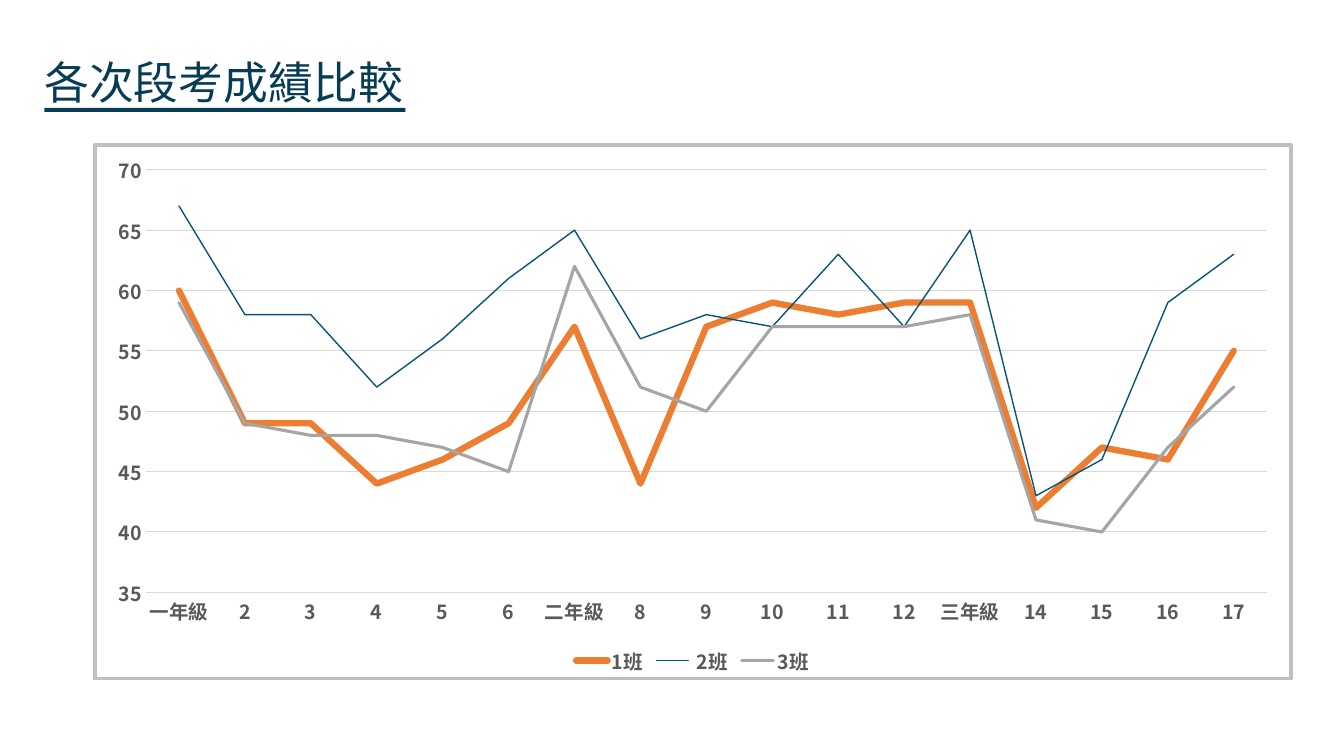
from lxml import etree
from pptx import Presentation
from pptx.chart.data import CategoryChartData
from pptx.dml.color import RGBColor
from pptx.enum.chart import XL_CHART_TYPE, XL_LEGEND_POSITION, XL_TICK_MARK
from pptx.enum.shapes import MSO_SHAPE
from pptx.enum.text import MSO_ANCHOR, MSO_AUTO_SIZE
from pptx.oxml import parse_xml
from pptx.oxml.ns import nsdecls, qn
from pptx.util import Inches, Pt

LINE_CHART = XL_CHART_TYPE.LINE
BOTTOM = XL_LEGEND_POSITION.BOTTOM
NO_TICK = XL_TICK_MARK.NONE
RECTANGLE = MSO_SHAPE.RECTANGLE
TOP = MSO_ANCHOR.TOP
GROW = MSO_AUTO_SIZE.SHAPE_TO_FIT_TEXT

EXAMS = ["一年級", "2", "3", "4", "5", "6", "二年級", "8", "9", "10", "11", "12",
         "三年級", "14", "15", "16", "17"]
CLASSES = [
    ("1班", "ED7D31", 4.5,
     [60, 49, 49, 44, 46, 49, 57, 44, 57, 59, 58, 59, 59, 42, 47, 46, 55]),
    (" 2班", "075576", 1,
     [67, 58, 58, 52, 56, 61, 65, 56, 58, 57, 63, 57, 65, 43, 46, 59, 63]),
    ("3班", "A5A5A5", 2.25,
     [59, 49, 48, 48, 47, 45, 62, 52, 50, 57, 57, 57, 58, 41, 40, 47, 52]),
]


def color(value):
    return RGBColor.from_string(value)


class ScoreSlide:
    title_font = "Noto Sans CJK TC"
    chart_font = "Noto Sans CJK SC"
    navy = "063D54"
    label_gray = "595959"
    grid_gray = "D9D9D9"
    border_gray = "BFBFBF"

    def __init__(self, presentation):
        self.slide = presentation.slides.add_slide(presentation.slide_layouts[6])

    def set_east_asian(self, properties, name):
        etree.SubElement(properties, qn("a:ea")).set("typeface", name)

    def style_labels(self, owner):
        owner.font.size = Pt(14)
        owner.font.bold = True
        owner.font.name = self.chart_font
        owner.font.color.rgb = color(self.label_gray)
        for properties in owner.font._element.iter(qn("a:defRPr")):
            self.set_east_asian(properties, self.chart_font)

    def style_line(self, line, shade, width):
        line.color.rgb = color(shade)
        line.width = Pt(width)

    def title(self, text, left, top, width, height):
        heading = self.slide.shapes.add_textbox(
            Inches(left), Inches(top), Inches(width), Inches(height))
        frame = heading.text_frame
        frame.word_wrap = True
        frame.auto_size = GROW
        frame.vertical_anchor = TOP
        frame.margin_left = frame.margin_top = frame.margin_right = 0
        frame.margin_bottom = Inches(0.05)
        frame.text = text
        paragraph = frame.paragraphs[0]
        paragraph.line_spacing = 1.2
        run = paragraph.runs[0]
        run.font.size = Pt(32)
        run.font.color.rgb = color(self.navy)
        run.font.name = self.title_font
        self.set_east_asian(run.font._element, self.title_font)

    def bar(self, left, top, width, height):
        underline = self.slide.shapes.add_shape(
            RECTANGLE, Inches(left), Inches(top), Inches(width), Inches(height))
        underline.shadow.inherit = False
        underline.fill.solid()
        underline.fill.fore_color.rgb = color(self.navy)
        underline.line.fill.background()

    def line_chart(self, categories, classes, left, top, width, height):
        scores = CategoryChartData()
        scores.categories = categories
        for name, _, _, values in classes:
            scores.add_series(name, values)
        chart = self.slide.shapes.add_chart(
            LINE_CHART, Inches(left), Inches(top), Inches(width), Inches(height),
            scores).chart
        chart.has_title = False
        chart.has_legend = True
        chart.legend.position = BOTTOM
        chart.legend.include_in_layout = False
        for owner in (chart, chart.legend, chart.category_axis.tick_labels,
                      chart.value_axis.tick_labels):
            self.style_labels(owner)
        self.axes(chart)
        plot = chart.plots[0]
        plot.vary_by_categories = False
        for series, (_, shade, weight, _) in zip(plot.series, classes):
            series.smooth = False
            self.style_line(series.format.line, shade, weight)
            series.format.line._get_or_add_ln().set("cap", "rnd")
        self.border(chart)

    def axes(self, chart):
        for axis in (chart.category_axis, chart.value_axis):
            axis.major_tick_mark = NO_TICK
            axis.minor_tick_mark = NO_TICK
        self.style_line(chart.category_axis.format.line, self.grid_gray, 0.75)
        scale = chart.value_axis
        scale.minimum_scale = 35
        scale.maximum_scale = 70
        scale.major_unit = 5
        scale.format.line.fill.background()
        scale.has_major_gridlines = True
        self.style_line(scale.major_gridlines.format.line, self.grid_gray, 0.75)

    def border(self, chart):
        frame = parse_xml(
            f'<c:spPr {nsdecls("c", "a")}>'
            '<a:solidFill><a:srgbClr val="FFFFFF"/></a:solidFill>'
            f'<a:ln w="{Pt(2.75)}"><a:solidFill>'
            f'<a:srgbClr val="{self.border_gray}"/></a:solidFill></a:ln></c:spPr>')
        chart._chartSpace.find(qn("c:chart")).addnext(frame)


def main():
    presentation = Presentation()
    presentation.slide_width = Inches(13.33)
    presentation.slide_height = Inches(7.5)
    scores = ScoreSlide(presentation)
    scores.line_chart(EXAMS, CLASSES, 0.92, 1.42, 11.9, 5.33)
    scores.title("各次段考成績比較", 0.44, 0.44, 4.36, 0.64)
    scores.bar(0.44, 1.07, 3.58, 0.04)
    presentation.save("out.pptx")


if __name__ == "__main__":
    main()
